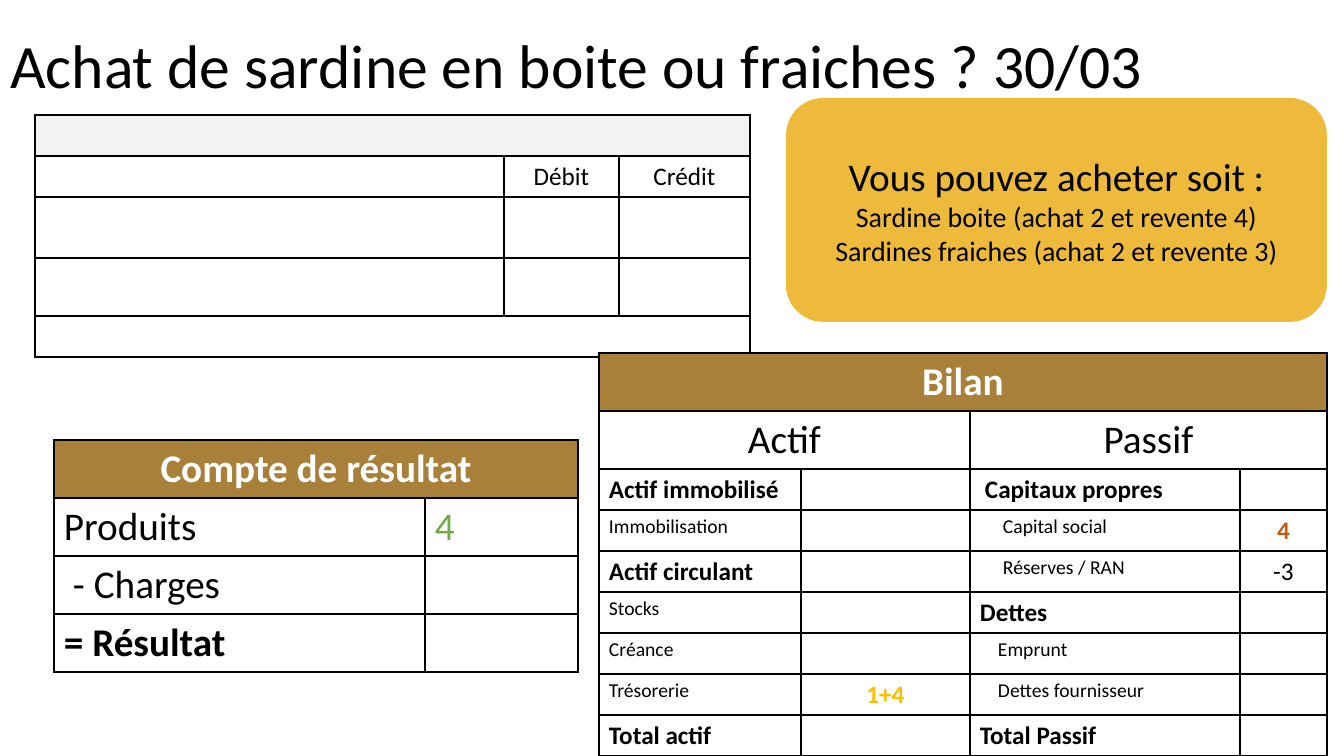
from dataclasses import dataclass

from lxml import etree
from pptx import Presentation
from pptx.dml.color import RGBColor
from pptx.enum.shapes import MSO_SHAPE
from pptx.enum.text import MSO_ANCHOR, PP_ALIGN
from pptx.oxml.ns import qn
from pptx.util import Pt

PX = 914400 / 100.8
LEFT, CENTER = PP_ALIGN.LEFT, PP_ALIGN.CENTER
TOP, MIDDLE = MSO_ANCHOR.TOP, MSO_ANCHOR.MIDDLE
ROUNDED = MSO_SHAPE.ROUNDED_RECTANGLE
TITLE_ONLY = 5


@dataclass(frozen=True)
class Theme:
    font: str = "Calibri"
    black: str = "000000"
    white: str = "FFFFFF"
    grey: str = "F2F2F2"
    brown: str = "A8803A"
    gold: str = "EEBA3C"
    green: str = "70AD47"
    orange: str = "C55A11"
    yellow: str = "FFC000"
    title: int = 44
    heading: int = 28
    choice: int = 20
    body: int = 18
    detail: int = 14


T = Theme()


@dataclass(frozen=True)
class Entry:
    """Content of one table cell; span counts the columns it covers."""
    text: str = ""
    size: int = T.body
    bold: bool = False
    color: str = T.black
    align: int = LEFT
    indent: int = 10
    span: int = 1
    fill: str = ""


EMPTY = Entry()


def emu(px):
    return round(px * PX)


def add_run(p, text, size, color=T.black, bold=False):
    r = p.add_run()
    r.text = text
    r.font.name = T.font
    r.font.size = Pt(size)
    r.font.bold = bold
    r.font.color.rgb = RGBColor.from_string(color)


def set_title(s, text, box):
    sp = s.shapes.title
    sp.left, sp.top, sp.width, sp.height = map(emu, box)
    tf = sp.text_frame
    tf.word_wrap = True
    tf.vertical_anchor = TOP
    p = tf.paragraphs[0]
    p.alignment = LEFT
    p.line_spacing = 0.9
    add_run(p, text, T.title)


def add_choice_box(s, box, lines):
    sp = s.shapes.add_shape(ROUNDED, *map(emu, box))
    sp.shadow.inherit = False
    sp.fill.solid()
    sp.fill.fore_color.rgb = RGBColor.from_string(T.gold)
    sp.line.fill.background()
    tf = sp.text_frame
    tf.word_wrap = True
    tf.vertical_anchor = MIDDLE
    for i, (text, size) in enumerate(lines):
        p = tf.add_paragraph() if i else tf.paragraphs[0]
        p.alignment = CENTER
        add_run(p, text, size)


def add_borders(cell):
    tc_pr = cell._tc.get_or_add_tcPr()
    for side in ("lnL", "lnR", "lnT", "lnB"):
        ln = etree.SubElement(tc_pr, qn(f"a:{side}"), w=str(Pt(1)))
        fill = etree.SubElement(ln, qn("a:solidFill"))
        etree.SubElement(fill, qn("a:srgbClr"), val=T.black)


def fill_cell(cell, entry):
    if entry.fill:
        cell.fill.solid()
        cell.fill.fore_color.rgb = RGBColor.from_string(entry.fill)
    cell.margin_left = emu(entry.indent)
    p = cell.text_frame.paragraphs[0]
    p.alignment = entry.align
    if entry.text:
        add_run(p, entry.text, entry.size, entry.color, entry.bold)


def add_grid(s, left, top, widths, heights, rows):
    """Each row lists its entries from left to right, spans included."""
    frame = s.shapes.add_table(len(heights), len(widths), emu(left), emu(top),
                               emu(sum(widths)), emu(sum(heights)))
    table = frame.table
    table.first_row = table.horz_banding = False
    for column, width in zip(table.columns, widths):
        column.width = emu(width)
    for row, height in zip(table.rows, heights):
        row.height = emu(height)
    for cell in table.iter_cells():
        add_borders(cell)
        cell.fill.background()
    for i, entries in enumerate(rows):
        j = 0
        for entry in entries:
            cell = table.cell(i, j)
            if entry.span > 1:
                cell.merge(table.cell(i, j + entry.span - 1))
            fill_cell(cell, entry)
            j += entry.span


def banner(text, span):
    return Entry(text, T.heading, True, T.white, CENTER, span=span, fill=T.brown)


def side(text):
    return Entry(text, T.heading, align=CENTER, span=2)


def line(text, bold=False, indent=10):
    return Entry(text, T.heading, bold, indent=indent)


def group(text, indent=10):
    return Entry(text, bold=True, indent=indent)


def detail(text, indent=10):
    return Entry(text, T.detail, indent=indent)


def amount(text, color=T.black, bold=False):
    return Entry(text, bold=bold, color=color, align=CENTER)


def add_journal(s):
    add_grid(s, 35, 115, [469, 115, 131], [41, 41, 61, 58, 41], [
        [Entry(span=3, fill=T.grey)],
        [EMPTY, amount("Débit"), amount("Crédit")],
        [EMPTY] * 3,
        [EMPTY] * 3,
        [Entry(span=3)],
    ])


def add_income_statement(s):
    add_grid(s, 54, 440, [371, 153], [58] * 4, [
        [banner("Compte de résultat", 2)],
        [line("Produits"), Entry("4", T.heading, color=T.green)],
        [line("- Charges", indent=19), EMPTY],
        [line("= Résultat", bold=True), EMPTY],
    ])


def add_balance_sheet(s):
    add_grid(s, 599, 353, [202, 169, 270, 87], [58] * 2 + [41] * 7, [
        [banner("Bilan", 4)],
        [side("Actif"), side("Passif")],
        [group("Actif immobilisé"), EMPTY, group("Capitaux propres", 15), EMPTY],
        [detail("Immobilisation"), EMPTY, detail("Capital social", 33),
         amount("4", T.orange, True)],
        [group("Actif circulant"), EMPTY, detail("Réserves / RAN", 33), amount("-3")],
        [detail("Stocks"), EMPTY, group("Dettes"), EMPTY],
        [detail("Créance"), EMPTY, detail("Emprunt", 28), EMPTY],
        [detail("Trésorerie"), amount("1+4", T.yellow, True),
         detail("Dettes fournisseur", 28), EMPTY],
        [group("Total actif"), EMPTY, group("Total Passif"), EMPTY],
    ])


def main():
    prs = Presentation()
    prs.slide_width, prs.slide_height = emu(1344), emu(756)
    s = prs.slides.add_slide(prs.slide_layouts[TITLE_ONLY])
    set_title(s, "Achat de sardine en boite ou fraiches ? 30/03", (0, 30, 1159, 146))
    add_journal(s)
    add_income_statement(s)
    add_balance_sheet(s)
    add_choice_box(s, (786, 98, 541, 224), [
        ("Vous pouvez acheter soit :", T.heading),
        ("Sardine boite (achat 2 et revente 4)", T.choice),
        ("Sardines fraiches (achat 2 et revente 3)", T.choice),
    ])
    prs.save("out.pptx")


if __name__ == "__main__":
    main()
